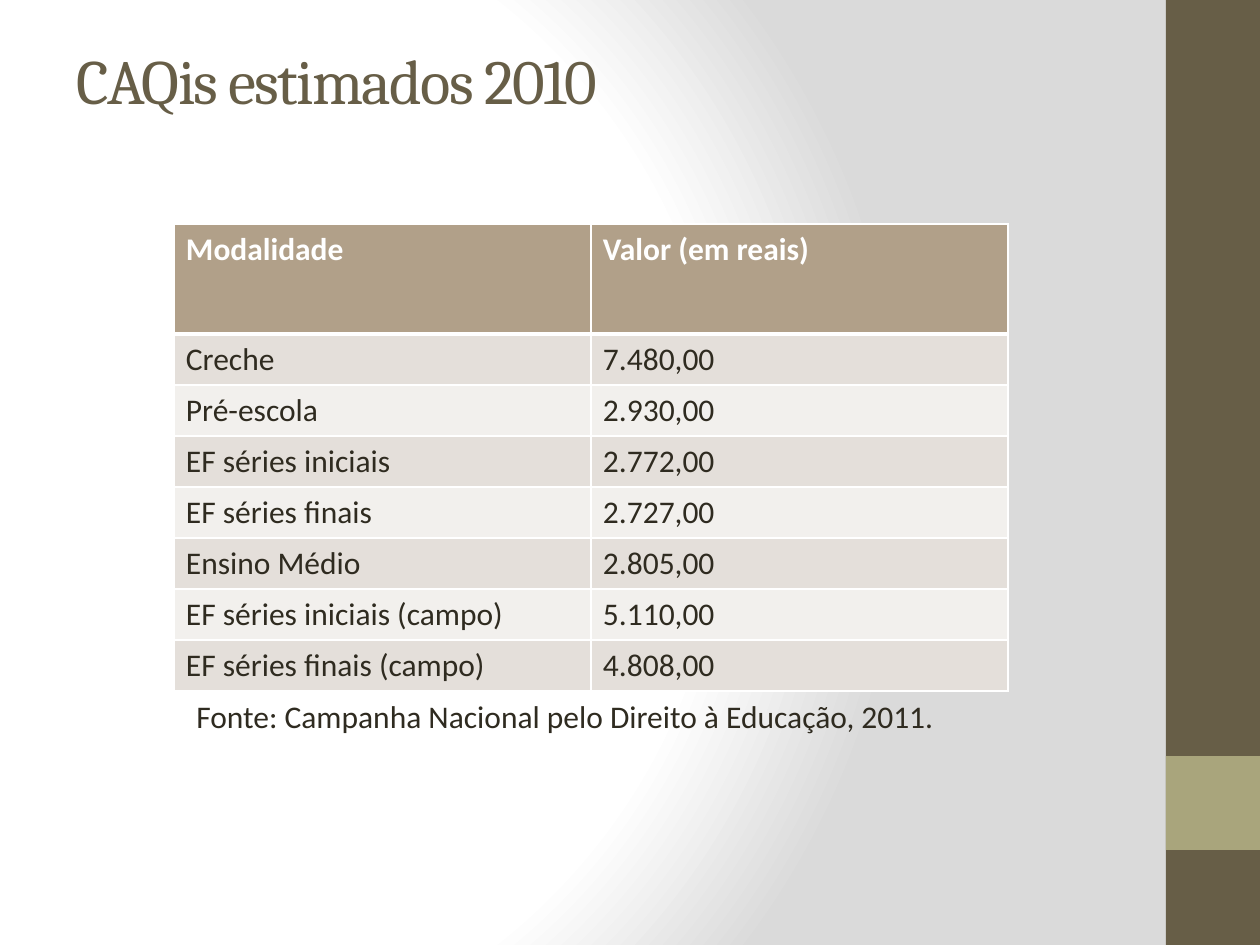
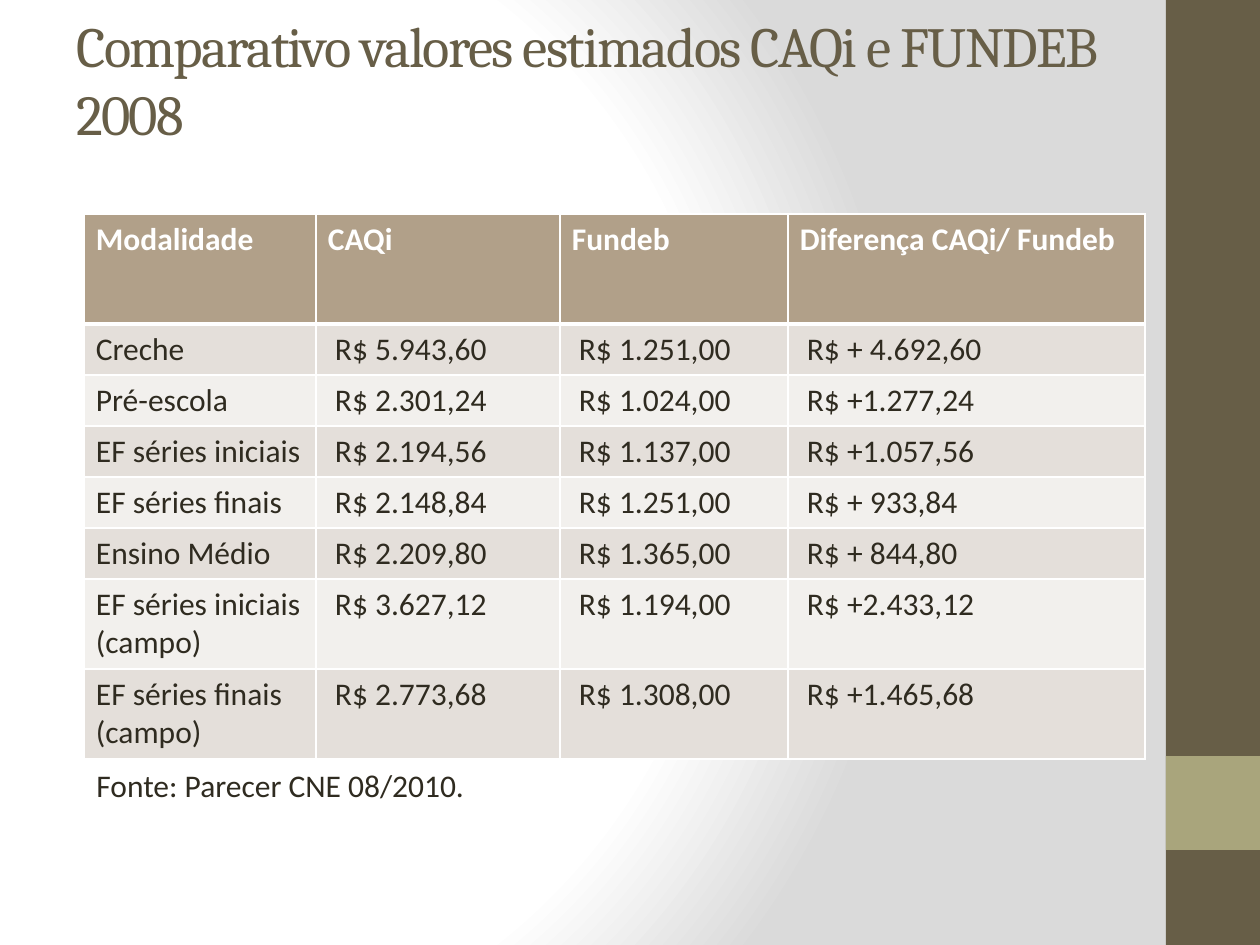
from dataclasses import dataclass

from lxml.etree import SubElement
from pptx import Presentation
from pptx.dml.color import RGBColor
from pptx.enum.shapes import MSO_SHAPE
from pptx.enum.text import MSO_ANCHOR
from pptx.oxml import parse_xml
from pptx.oxml.ns import nsdecls, qn
from pptx.util import Pt

PX = 914400 / 126


@dataclass(frozen=True)
class Theme:
    olive: str = "675E47"
    sage: str = "A9A57C"
    tan: str = "B1A089"
    band_dark: str = "E4DFDA"
    band_light: str = "F2F0ED"
    ink: str = "2F2B20"
    white: str = "FFFFFF"
    grey: str = "DADADA"
    heading: str = "Cambria"
    body: str = "Calibri"
    title_size: float = 36
    long_title_size: float = 32.4
    body_size: float = 18


T = Theme()

STAGES = [
    "Creche",
    "Pré-escola",
    "EF séries iniciais",
    "EF séries finais",
    "Ensino Médio",
    "EF séries iniciais (campo)",
    "EF séries finais (campo)",
]
CAQI_2010 = ["7.480,00", "2.930,00", "2.772,00", "2.727,00", "2.805,00", "5.110,00", "4.808,00"]
COMPARISON_2008 = [
    ("R$ 5.943,60", "R$ 1.251,00", "R$ + 4.692,60"),
    ("R$ 2.301,24", "R$ 1.024,00", "R$ +1.277,24"),
    ("R$ 2.194,56", "R$ 1.137,00", "R$ +1.057,56"),
    ("R$ 2.148,84", "R$ 1.251,00", "R$ + 933,84"),
    ("R$ 2.209,80", "R$ 1.365,00", "R$ + 844,80"),
    ("R$ 3.627,12", "R$ 1.194,00", "R$ +2.433,12"),
    ("R$ 2.773,68", "R$ 1.308,00", "R$ +1.465,68"),
]
HEADER_H, ROW_H, TALL_ROW_H = 110, 51, 90


def px(*values):
    return [round(v * PX) for v in values]


def write(tf, text, font=T.body, size=T.body_size, color=T.ink, bold=False, spacing=0):
    tf.word_wrap = True
    r = tf.paragraphs[0].add_run()
    r.text = text
    r.font.name = font
    r.font.size = Pt(size)
    r.font.bold = bold
    r.font.color.rgb = RGBColor.from_string(color)
    if spacing:
        r.font._element.set("spc", str(spacing * 100))


def add_text(s, text, box, anchor=MSO_ANCHOR.TOP, **fmt):
    tf = s.shapes.add_textbox(*px(*box)).text_frame
    tf.vertical_anchor = anchor
    write(tf, text, **fmt)


def add_band(s, box, color):
    sp = s.shapes.add_shape(MSO_SHAPE.RECTANGLE, *px(*box))
    sp.shadow.inherit = False
    sp.fill.solid()
    sp.fill.fore_color.rgb = RGBColor.from_string(color)
    sp.line.fill.background()


def set_background(master):
    master.background.fill.solid()
    stops = "".join(
        f'<a:gs pos="{pos * 1000}"><a:srgbClr val="{color}"/></a:gs>'
        for pos, color in [(0, T.white), (75, T.white), (100, T.grey)]
    )
    gradient = parse_xml(
        f'<a:gradFill {nsdecls("a")} rotWithShape="1"><a:gsLst>{stops}</a:gsLst>'
        '<a:path path="circle"><a:fillToRect l="20000" t="50000" r="100000" b="50000"/>'
        "</a:path></a:gradFill>"
    )
    bg = master.element.find(".//" + qn("p:bgPr"))
    bg.replace(bg[0], gradient)


def add_border(cell, side, width):
    ln = SubElement(cell._tc.get_or_add_tcPr(), qn(f"a:ln{side}"), w=str(Pt(width)))
    SubElement(SubElement(ln, qn("a:solidFill")), qn("a:srgbClr"), val=T.white)


def format_cell(cell, text, is_header, fill, margin):
    borders = {"L": 1, "R": 1, "T": 1, "B": 3} if is_header else {"L": 1, "R": 1, "B": 1}
    for side, width in borders.items():
        add_border(cell, side, width)
    cell.fill.solid()
    cell.fill.fore_color.rgb = RGBColor.from_string(fill)
    cell.margin_left = px(margin)[0]
    write(cell.text_frame, text, color=T.white if is_header else T.ink, bold=is_header)


def add_values_table(s, left, top, widths, heights, rows, value_margin=12):
    box = px(left, top, sum(widths), sum(heights))
    table = s.shapes.add_table(len(rows), len(widths), *box).table
    table.horz_banding = False
    for col, width in zip(table.columns, px(*widths)):
        col.width = width
    for row, height in zip(table.rows, px(*heights)):
        row.height = height
    for i, texts in enumerate(rows):
        fill = T.tan if i == 0 else T.band_dark if i % 2 else T.band_light
        for j, text in enumerate(texts):
            margin = value_margin if i and j else 12
            format_cell(table.cell(i, j), text, i == 0, fill, margin)


def add_slide(prs, title, size=T.title_size):
    s = prs.slides.add_slide(prs.slide_layouts[6])
    add_band(s, (1166, 0, 94, 945), T.olive)
    add_band(s, (1166, 756, 94, 94), T.sage)
    add_text(s, title, (64, 0, 1134, 158), MSO_ANCHOR.MIDDLE,
             font=T.heading, size=size, color=T.olive, spacing=-1)
    return s


def main():
    prs = Presentation()
    prs.slide_width, prs.slide_height = px(1260, 945)
    set_background(prs.slide_master)

    s = add_slide(prs, "CAQis estimados 2010")
    rows = [("Modalidade", "Valor (em reais)"), *zip(STAGES, CAQI_2010)]
    add_values_table(s, 174, 224, [417] * 2, [HEADER_H] + [ROW_H] * 7, rows)
    add_text(s, "Fonte: Campanha Nacional pelo Direito à Educação, 2011.", (184, 691, 973, 50))

    s = add_slide(prs, "Comparativo valores estimados CAQi e FUNDEB 2008", T.long_title_size)
    rows = [("Modalidade", "CAQi", "Fundeb", "Diferença CAQi/ Fundeb")]
    rows += [(stage, *values) for stage, values in zip(STAGES, COMPARISON_2008)]
    heights = [HEADER_H] + [ROW_H] * 5 + [TALL_ROW_H] * 2
    add_values_table(s, 84, 214, [232, 244, 228, 357], heights, rows, value_margin=19)
    add_text(s, "Fonte: Parecer CNE 08/2010.", (84, 760, 1042, 50))

    prs.save("out.pptx")


if __name__ == "__main__":
    main()
